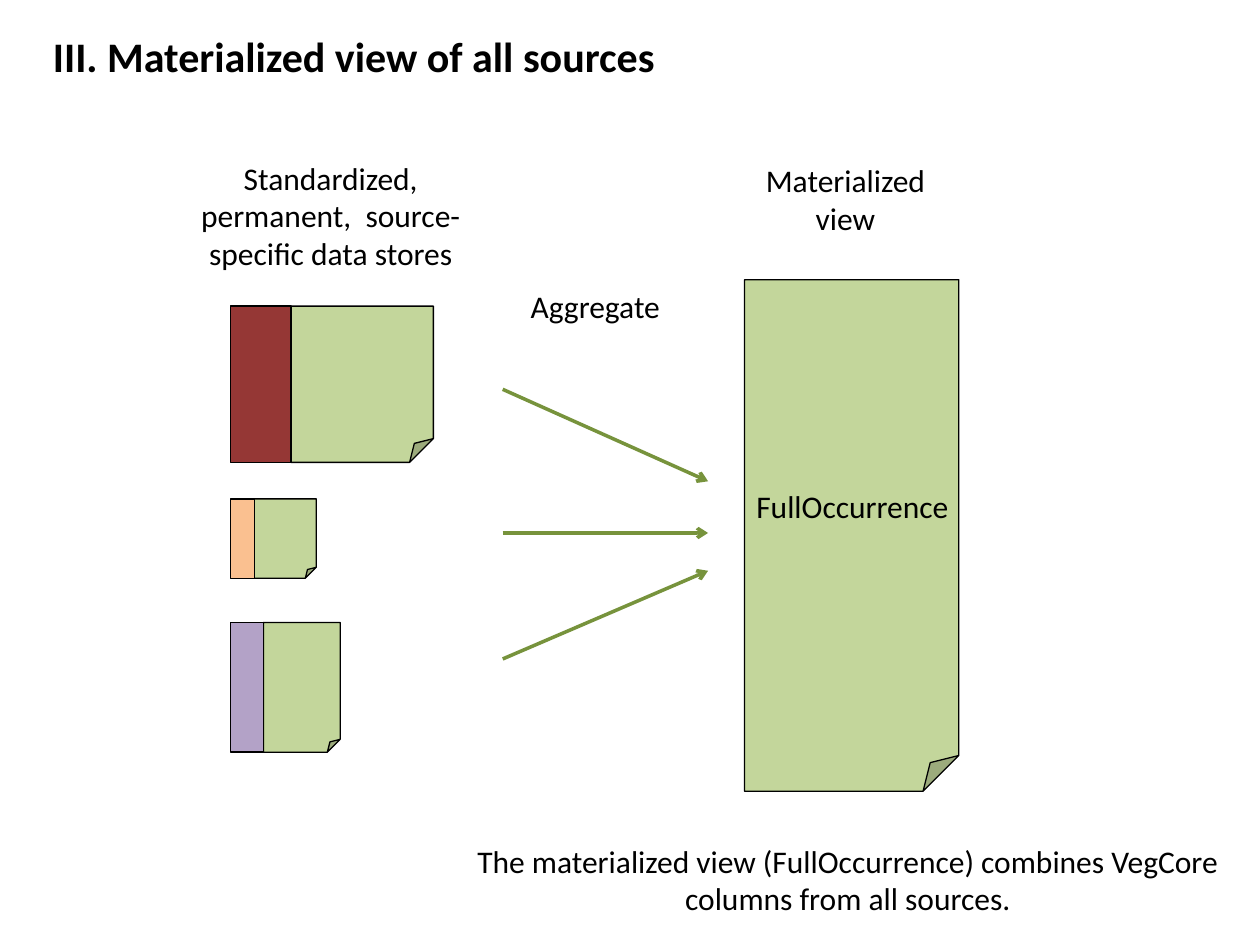
from pptx import Presentation
from pptx.dml.color import RGBColor
from pptx.enum.shapes import MSO_CONNECTOR as Line, MSO_SHAPE as Shape
from pptx.enum.text import MSO_ANCHOR as Anchor, MSO_AUTO_SIZE as Fit, PP_ALIGN as Align
from pptx.oxml.ns import qn
from pptx.util import Pt
from lxml.etree import SubElement as add_node

PX = 9144
color = RGBColor.from_string


def write(box, text, size=18, bold=False, align=Align.CENTER):
    frame = box.text_frame
    frame.word_wrap = True
    frame.auto_size = Fit.NONE
    frame.vertical_anchor = Anchor.TOP
    frame.text = text
    par = frame.paragraphs[0]
    par.alignment = align
    par.font.name = "Calibri"
    par.font.size = Pt(size)
    par.font.bold = bold
    par.font.color.rgb = color("000000")


def draw(shapes, kind, fill, *rect):
    item = shapes.add_shape(kind, *[n * PX for n in rect])
    item.shadow.inherit = False
    item.fill.solid()
    item.fill.fore_color.rgb = color(fill)
    item.line.color.rgb = color("000000")
    item.line.width = Pt(0.75)


deck = Presentation()
deck.slide_width = 1000 * PX
deck.slide_height = 750 * PX
slide = deck.slides.add_slide(deck.slide_layouts[5])
shapes = slide.shapes

title = shapes.title
title.left, title.top, title.width, title.height = [n * PX for n in (32, 19, 915, 50)]
write(title, "III. Materialized view of all sources", 24, True, Align.LEFT)

GREEN = "C3D69B"
draw(shapes, Shape.FOLDED_CORNER, GREEN, 591, 222, 170, 406)

labels = [
    ("Standardized, permanent,  source-specific data stores", 126, 121, 273, 101),
    ("Aggregate", 368, 223, 209, 40),
    ("FullOccurrence", 584, 382, 185, 40),
    ("Materialized view", 584, 123, 174, 71),
    ("The materialized view (FullOccurrence) combines VegCore columns from all sources.",
     368, 663, 610, 71),
]
for text, *rect in labels:
    write(shapes.add_textbox(*[n * PX for n in rect]), text)

for start, end in [(309, 382), (423, 423), (523, 453)]:
    arrow = shapes.add_connector(
        Line.STRAIGHT, 399 * PX, start * PX, 562 * PX, end * PX)
    arrow.line.color.rgb = color("77933C")
    arrow.line.width = Pt(2)
    add_node(arrow.line._get_or_add_ln(), qn("a:tailEnd"), type="arrow")
    add_node(arrow._element.spPr, qn("a:effectLst"))

LEFT = 183
stores = [
    ("953735", 243, 124, 48, 231, 113),
    ("FAC090", 396, 63, 19, 199, 52),
    ("B3A2C7", 494, 103, 26, 209, 61),
]
for fill, top, high, band, left, wide in stores:
    group = shapes.add_group_shape()
    draw(group.shapes, Shape.FOLDED_CORNER, GREEN, left, top, wide, high)
    draw(group.shapes, Shape.RECTANGLE, fill, LEFT, top, band, high)

deck.save("out.pptx")
